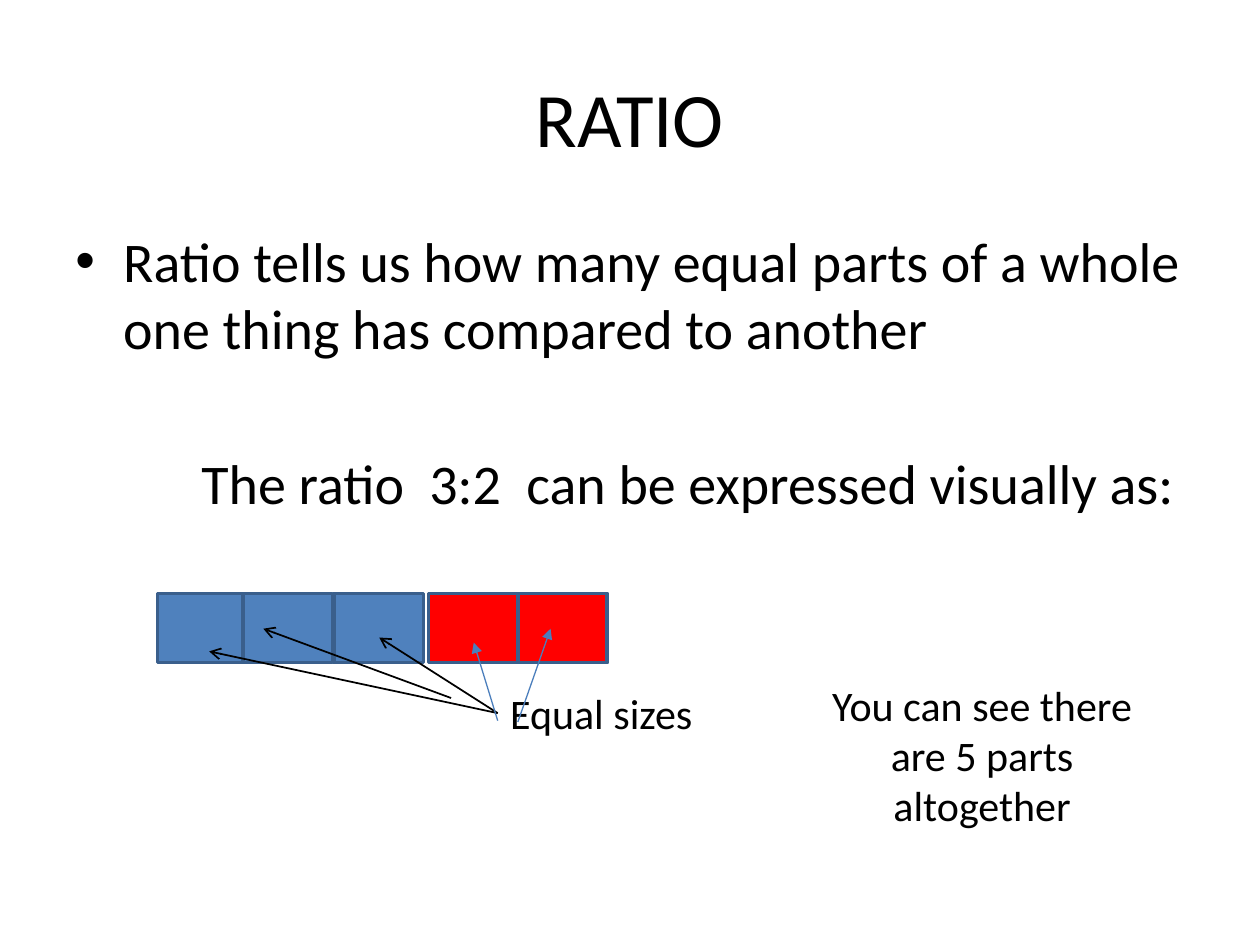
from lxml.etree import SubElement
from pptx import Presentation
from pptx.dml.color import RGBColor
from pptx.enum.shapes import MSO_CONNECTOR, MSO_SHAPE
from pptx.enum.text import MSO_ANCHOR, PP_ALIGN
from pptx.oxml.ns import qn
from pptx.util import Inches, Pt

BLACK = RGBColor(0x00, 0x00, 0x00)
BLUE = RGBColor(0x4F, 0x81, 0xBD)
RED = RGBColor(0xFF, 0x00, 0x00)
OUTLINE = RGBColor(0x3A, 0x5F, 0x8C)
ARROW_BLUE = RGBColor(0x4B, 0x7E, 0xBC)

PART_TOP, PART_WIDTH, PART_HEIGHT = 4.71, 0.71, 0.55
PARTS = [(1.25, BLUE), (1.93, BLUE), (2.65, BLUE), (3.4, RED), (4.11, RED)]
BLACK_ARROWS = [
    ((3.95, 5.66), (3.01, 5.06)),
    ((3.58, 5.54), (2.09, 4.99)),
    ((3.95, 5.66), (1.66, 5.17)),
]
BLUE_ARROWS = [((3.95, 5.72), (3.76, 5.1)), ((4.11, 5.73), (4.37, 4.99))]


def set_attributes(target, values):
    """Set each named attribute of the target."""
    for name, value in values.items():
        setattr(target, name, value)


def write_text(para, text, size, align=PP_ALIGN.LEFT, before=0):
    """Fill a paragraph with one formatted run."""
    set_attributes(para, {"alignment": align, "space_before": Pt(before)})
    span = para.add_run()
    span.text = text
    set_attributes(span.font, {"name": "Calibri", "size": Pt(size)})
    span.font.color.rgb = BLACK


def set_indent(para, left, hanging=0, bullet=None):
    """Indent a paragraph and give it an optional bullet."""
    properties = para._p.get_or_add_pPr()
    properties.set("marL", str(Inches(left)))
    properties.set("indent", str(-Inches(hanging)))
    if bullet:
        SubElement(properties, qn("a:buFont"), typeface="Arial")
        SubElement(properties, qn("a:buChar"), char=bullet)


def add_box(page, left, top, width, height):
    """Add a wrapping text box and return its text frame."""
    box = page.shapes.add_textbox(
        Inches(left), Inches(top), Inches(width), Inches(height)
    )
    box.text_frame.word_wrap = True
    return box.text_frame


def add_title(page, text):
    """Place and fill the title placeholder."""
    title = page.shapes.title
    set_attributes(title, {
        "left": Inches(0.5), "top": Inches(0.3),
        "width": Inches(9), "height": Inches(1.25),
    })
    title.text_frame.vertical_anchor = MSO_ANCHOR.MIDDLE
    write_text(title.text_frame.paragraphs[0], text, 44, PP_ALIGN.CENTER)


def add_explanation(page):
    """Add the definition of ratio and the line leading to the bar."""
    frame = add_box(page, 0.5, 1.75, 9, 4.95)
    definition = frame.paragraphs[0]
    write_text(
        definition,
        "Ratio tells us how many equal parts of a whole "
        "one thing has compared to another",
        32, before=2,
    )
    set_indent(definition, 0.38, 0.38, "•")
    example = frame.add_paragraph()
    write_text(
        example, "The ratio  3:2  can be expressed visually as:", 32, before=50
    )
    set_indent(example, 1)


def add_part(page, left, color):
    """Add one equal part of the ratio bar."""
    part = page.shapes.add_shape(
        MSO_SHAPE.RECTANGLE, Inches(left), Inches(PART_TOP),
        Inches(PART_WIDTH), Inches(PART_HEIGHT),
    )
    part.shadow.inherit = False
    part.fill.solid()
    part.fill.fore_color.rgb = color
    part.line.color.rgb = OUTLINE
    part.line.width = Pt(2)


def add_arrow(page, start, end, color, width, head):
    """Add a straight arrow pointing at its end."""
    arrow = page.shapes.add_connector(
        MSO_CONNECTOR.STRAIGHT, *(Inches(value) for value in (*start, *end))
    )
    arrow.line.color.rgb = color
    arrow.line.width = Pt(width)
    SubElement(arrow.line._get_or_add_ln(), qn("a:tailEnd"), type=head)
    SubElement(arrow._element.spPr, qn("a:effectLst"))


def main():
    """Build the ratio slide and save it."""
    deck = Presentation()
    set_attributes(
        deck, {"slide_width": Inches(10), "slide_height": Inches(7.5)}
    )
    page = deck.slides.add_slide(deck.slide_layouts[5])
    add_title(page, "RATIO")
    add_explanation(page)
    for left, color in PARTS:
        add_part(page, left, color)
    label = add_box(page, 3.95, 5.41, 1.89, 0.5)
    write_text(label.paragraphs[0], "Equal sizes", 24)
    for start, end in BLACK_ARROWS:
        add_arrow(page, start, end, BLACK, 1, "arrow")
    remark = add_box(page, 6.26, 5.34, 3.07, 1.31)
    write_text(
        remark.paragraphs[0], "You can see there are 5 parts altogether",
        24, PP_ALIGN.CENTER,
    )
    for start, end in BLUE_ARROWS:
        add_arrow(page, start, end, ARROW_BLUE, 0.75, "triangle")
    deck.save("out.pptx")


if __name__ == "__main__":
    main()
